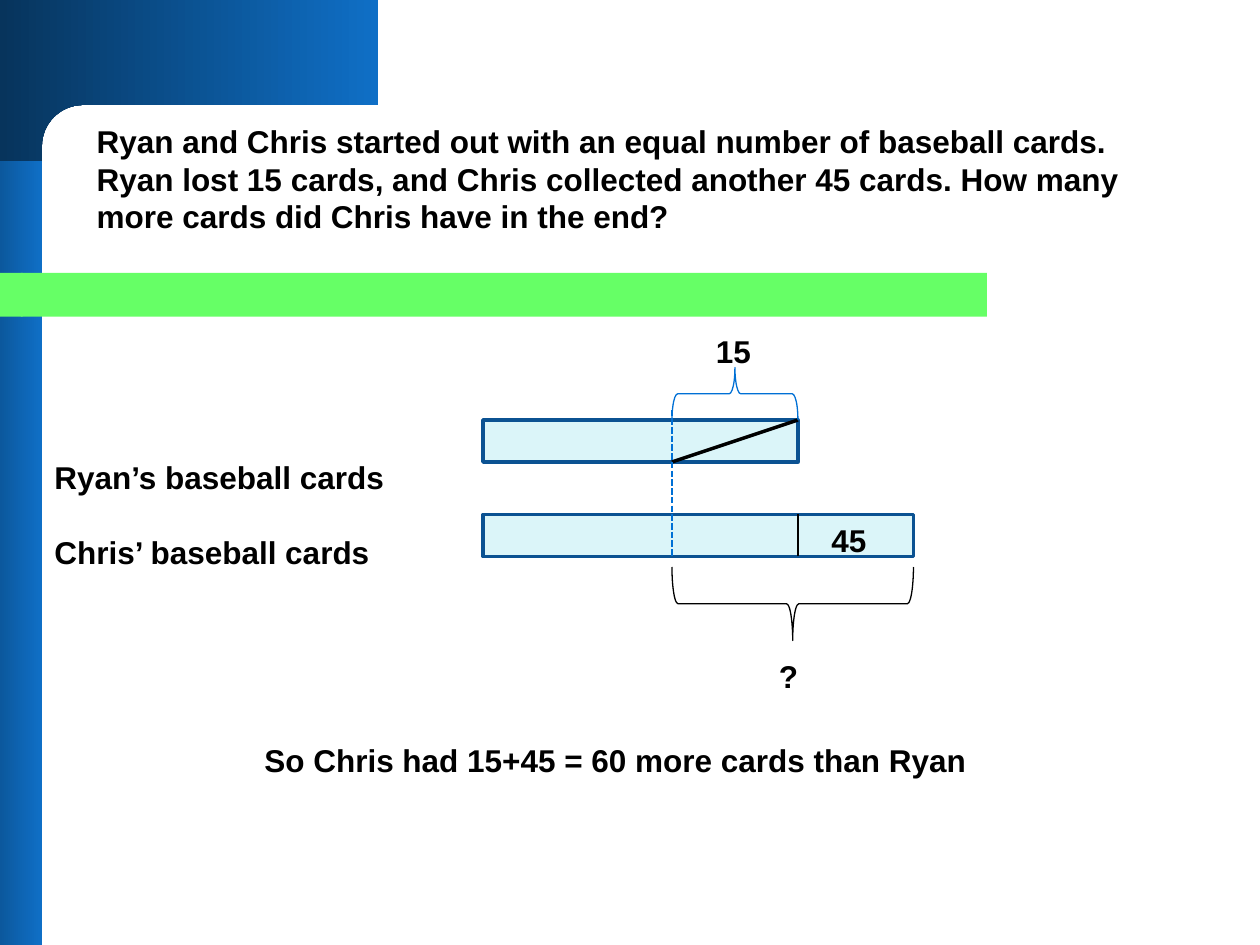
from math import cos, pi, sin

from lxml import etree
from pptx import Presentation
from pptx.dml.color import RGBColor
from pptx.enum import dml, shapes, text
from pptx.oxml.ns import qn
from pptx.util import Pt


class Theme:
    font, size = "Arial", 18
    ink, paper = "000000", "FFFFFF"
    deep_blue, blue = "07345C", "0F6FC6"
    green = "66FF66"
    bar_fill, bar_edge = "DBF5F9", "0B5292"
    accent = "0070D5"


def rgb(value):
    return RGBColor.from_string(value)


class Deck:
    """Holds the theme and the current slide; lengths are in points."""

    def __init__(self, prs, theme):
        self.theme = theme
        self.s = prs.slides.add_slide(prs.slide_layouts[5])

    def paint(self, sp, fill=None, line=None, width=1):
        sp.shadow.inherit = False
        if fill == "gradient":
            sp.fill.gradient()
            sp.fill.gradient_angle = 0
            stops = sp.fill.gradient_stops
            for stop, colour in zip(stops, (self.theme.deep_blue, self.theme.blue)):
                stop.color.rgb = rgb(colour)
        elif fill:
            sp.fill.solid()
            sp.fill.fore_color.rgb = rgb(fill)
        else:
            sp.fill.background()
        if line:
            sp.line.color.rgb = rgb(line)
            sp.line.width = Pt(width)
        else:
            sp.line.fill.background()
        return sp

    def shape(self, kind, x, y, w, h, fill=None, line=None, width=1):
        sp = self.s.shapes.add_shape(kind, Pt(x), Pt(y), Pt(w), Pt(h))
        return self.paint(sp, fill, line, width)

    def outline(self, points, fill):
        pts = [(Pt(x), Pt(y)) for x, y in points]
        builder = self.s.shapes.build_freeform(*pts[0], scale=1.0)
        builder.add_line_segments(pts[1:], close=True)
        return self.paint(builder.convert_to_shape(), fill)

    def line(self, x1, y1, x2, y2, colour, width, dash=None):
        ln = self.s.shapes.add_connector(
            shapes.MSO_CONNECTOR.STRAIGHT, Pt(x1), Pt(y1), Pt(x2), Pt(y2))
        ln.line.color.rgb = rgb(colour)
        ln.line.width = Pt(width)
        ln.line.dash_style = dash
        etree.SubElement(ln._element.spPr, qn("a:effectLst"))

    def brace(self, kind, x1, x2, y, depth, fill=None, colour=None):
        """Draw a brace lying across x1 to x2, with its top at y."""
        span = x2 - x1
        sp = self.shape(kind, (x1 + x2 - depth) / 2, y + (depth - span) / 2,
                        depth, span, fill, colour, 0.75)
        sp.rotation = 270
        return sp

    def set_text(self, sp, lines, gap=0, wrap=True):
        tf = sp.text_frame
        tf.word_wrap = wrap
        tf.auto_size = text.MSO_AUTO_SIZE.NONE
        tf.vertical_anchor = text.MSO_ANCHOR.TOP
        for i, words in enumerate(lines):
            p = tf.paragraphs[0] if i == 0 else tf.add_paragraph()
            p.text = words
            p.alignment = text.PP_ALIGN.LEFT
            p.space_before = Pt(gap if i else 0)
            p.font.name = self.theme.font
            p.font.size = Pt(self.theme.size)
            p.font.bold = True
            p.font.color.rgb = rgb(self.theme.ink)

    def label(self, lines, x, y, w, h=29, gap=0, wrap=True):
        sp = self.s.shapes.add_textbox(Pt(x), Pt(y), Pt(w), Pt(h))
        self.set_text(sp, lines, gap, wrap)

    def title(self, words, x, y, w, h):
        sp = self.s.shapes.title
        sp.left, sp.top, sp.width, sp.height = Pt(x), Pt(y), Pt(w), Pt(h)
        self.set_text(sp, [words])


def main():
    prs = Presentation()
    prs.slide_width, prs.slide_height = Pt(720), Pt(540)
    t = Theme()
    d = Deck(prs, t)
    kinds = shapes.MSO_SHAPE

    # Blue side band and corner with a rounded inner edge
    d.shape(kinds.RECTANGLE, -36, 0, 60, 540, "gradient")
    radius, inner_x, inner_y = 23.5, 47.5, 83.5
    angles = [pi / 2 * i / 16 for i in range(17)]
    curve = [(inner_x - radius * sin(a), inner_y - radius * cos(a)) for a in angles]
    d.outline([(0, 0), (216, 0), (216, 60), *curve, (24, 92), (0, 92)], "gradient")

    # Green rule with a rounded left cap
    rule = d.shape(kinds.ROUNDED_RECTANGLE, 12, 156, 552, 25, t.green)
    rule.adjustments[0] = 0
    cap = d.shape(kinds.FLOWCHART_DELAY, -18, 156, 31, 25, t.green)
    cap._element.spPr.find(qn("a:xfrm")).set("flipH", "1")

    # Question and row labels
    d.title("Ryan and Chris started out with an equal number of baseball cards. "
            "Ryan lost 15 cards, and Chris collected another 45 cards. "
            "How many more cards did Chris have in the end?", 48, 66, 636, 73)
    d.label(["Ryan’s baseball cards", "Chris’ baseball cards"], 24, 258, 222, 73, gap=21.5)

    # Bars: Ryan's remainder ends at kept, the equal start at start, Chris' total at total
    left, kept, start, total = 276, 384, 456, 522
    ryan_y, chris_y, bar_h = 240, 294, 24
    for y, end in ((ryan_y, start), (chris_y, total)):
        d.shape(kinds.RECTANGLE, left, y, end - left, bar_h, t.bar_fill, t.bar_edge, 2)
    d.line(kept, ryan_y + bar_h, start, ryan_y, t.ink, 2)
    d.line(kept, 234, kept, chris_y + bar_h, t.accent, 1.25, dml.MSO_LINE.SQUARE_DOT)
    d.line(start, chris_y, start, chris_y + bar_h, t.ink, 1.5)

    # Braces and amounts
    lost = d.brace(kinds.RIGHT_BRACE, kept, start, 210, 30, colour=t.accent)
    lost.adjustments[0] = 0.11
    d.brace(kinds.LEFT_BRACE, kept, total, 324, 42, t.paper, t.ink)
    d.label(["15"], 402, 186, 36)
    d.label(["45"], 468, 294, 34.5, wrap=False)
    d.label(["?"], 438, 372, 30)

    # Answer
    d.label(["So Chris had 15+45 = 60 more cards than Ryan"], 144, 420, 420, wrap=False)

    prs.save("out.pptx")


if __name__ == "__main__":
    main()
